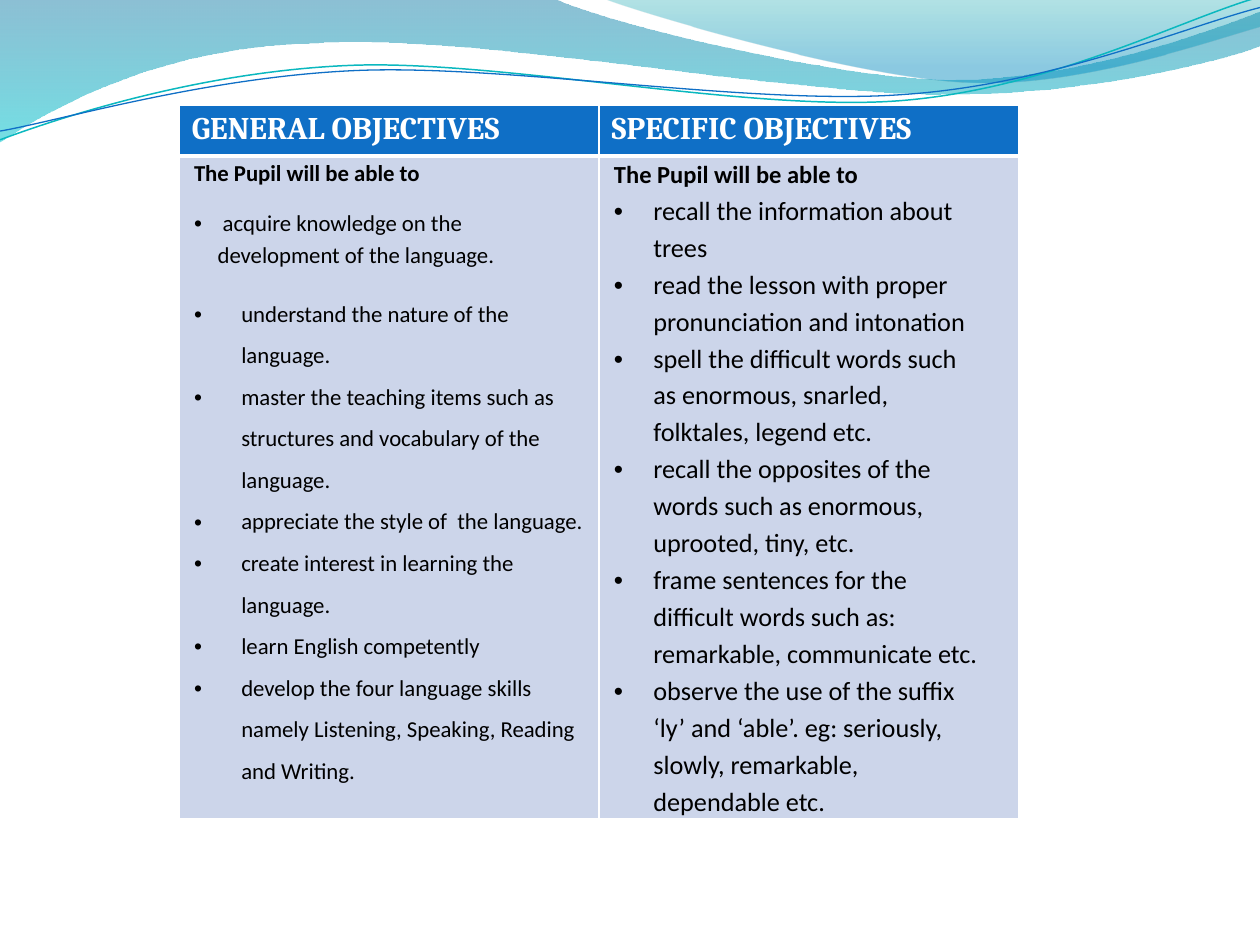
import math
from dataclasses import dataclass

from lxml import etree
from pptx import Presentation
from pptx.dml.color import RGBColor
from pptx.enum.text import MSO_ANCHOR
from pptx.oxml.ns import qn
from pptx.util import Pt

TOP = MSO_ANCHOR.TOP


@dataclass(frozen=True)
class Theme:
    white: str = "FFFFFF"
    black: str = "000000"
    blue: str = "0F6FC6"
    teal: str = "0AB8BF"
    pale: str = "CCD5EA"
    # Gradient stops: position %, colour, opacity %
    wave: tuple = ((0, "0074A1", 45), (100, "00C6CF", 55))
    crest: tuple = ((0, "00A1A9", 30), (80, "008BBF", 45))
    heading_font: str = "Cambria"
    body_font: str = "Calibri"
    heading: int = 18
    general: int = 13
    lead: int = 14
    specific: int = 15


# Outlines in points: two numbers make a line, six make a Bézier curve
WAVE = [(0, 0), (316.8, -0.7), (342.7, 12.2, 478.1, 45.4, 545.8, 45.4),
        (614.2, 45.4, 689.8, 18.7, 720, 6.5), (720.7, 25.9),
        (707.8, 31.7, 626.4, 54.7, 537.1, 54), (447.8, 54, 275, 20.2, 185, 24.5),
        (92.9, 25.9, 33.1, 59.8, -0.7, 81.4)]
CREST = [(344.9, -0.7), (366.5, 7.9, 491, 44.6, 553.7, 46.8),
         (616.3, 49.7, 691.9, 23, 720, 15.1), (720, 0)]
TEAL_LINE = [(0, 79.9), (34.6, 67, 113.8, 41, 199.4, 37.4),
             (284.4, 33.8, 427, 64.1, 513.4, 57.6), (599.8, 51.1, 675.4, 10.8, 718.6, -1.4)]
BLUE_LINE = [(0, 74.9), (33.8, 69.1, 118.1, 43.9, 203.8, 40.3),
             (290.2, 36.7, 429.8, 60.5, 516.2, 54), (601.9, 48.2, 677.5, 15.1, 720, 4.3)]
LINE_TILT = -2.7

LEAD = "The Pupil will be able to"
GENERAL_FIRST = " acquire knowledge on the development of the language."
GENERAL = [
    "understand the nature of the language.",
    "master the teaching items such as structures and vocabulary of the language.",
    "appreciate the style of  the language.",
    "create interest in learning the language.",
    "learn English competently",
    "develop the four language skills namely Listening, Speaking, Reading and Writing.",
]
SPECIFIC = [
    "recall the information about trees",
    "read the lesson with proper pronunciation and intonation",
    "spell the difficult words such as enormous, snarled, folktales, legend etc.",
    "recall the opposites of the words such as enormous, uprooted, tiny, etc.",
    "frame sentences for the difficult words such as: remarkable, communicate etc.",
    "observe the use of the suffix ‘ly’ and ‘able’. eg: seriously, slowly, remarkable, "
    "dependable etc.",
]


def pairs(part):
    return list(zip(part[::2], part[1::2]))


def turn(outline, degrees, center):
    """Rotate every point of an outline clockwise about a center."""
    cos, sin = math.cos(math.radians(degrees)), math.sin(math.radians(degrees))
    turned = []
    for part in outline:
        offsets = [(x - center[0], y - center[1]) for x, y in pairs(part)]
        turned.append(tuple(value for x, y in offsets
                            for value in (center[0] + x * cos - y * sin,
                                          center[1] + x * sin + y * cos)))
    return turned


def add_element(parent, tag, **attributes):
    return etree.SubElement(parent, qn(tag), {k: str(v) for k, v in attributes.items()})


class SlideBuilder:
    def __init__(self, slide, theme):
        self.slide = slide
        self.theme = theme

    def freeform(self, outline, closed):
        ends = [(Pt(part[-2]), Pt(part[-1])) for part in outline]
        builder = self.slide.shapes.build_freeform(*ends[0], scale=1.0)
        builder.add_line_segments(ends[1:], close=closed)
        shape = builder.convert_to_shape()
        shape.shadow.inherit = False
        # Bend the straight segments that have control points
        segments = list(shape.element.iter(qn("a:lnTo")))
        for segment, part in zip(segments, outline[1:]):
            if len(part) == 6:
                bend = etree.Element(qn("a:cubicBezTo"))
                for x, y in pairs(part):
                    add_element(bend, "a:pt", x=Pt(x) - shape.left, y=Pt(y) - shape.top)
                segment.getparent().replace(segment, bend)
        return shape

    def gradient_area(self, outline, stops):
        shape = self.freeform(outline, closed=True)
        shape.line.fill.background()
        gradient = etree.Element(qn("a:gradFill"), rotWithShape="1")
        stop_list = add_element(gradient, "a:gsLst")
        for position, color, opacity in stops:
            stop = add_element(stop_list, "a:gs", pos=position * 1000)
            tone = add_element(stop, "a:srgbClr", val=color)
            add_element(tone, "a:alpha", val=opacity * 1000)
        add_element(gradient, "a:lin", ang=90 * 60000, scaled=0)
        shape.element.spPr.find(qn("a:custGeom")).addnext(gradient)

    def tilted_curve(self, outline, center, color, width):
        shape = self.freeform(turn(outline, -LINE_TILT, center), closed=False)
        shape.rotation = LINE_TILT
        shape.fill.background()
        shape.line.color.rgb = RGBColor.from_string(color)
        shape.line.width = Pt(width)

    def table(self, left, top, column_width, row_heights):
        frame = self.slide.shapes.add_table(len(row_heights), 2, Pt(left), Pt(top),
                                            Pt(2 * column_width), Pt(sum(row_heights)))
        table = frame.table
        table.horz_banding = False
        for row, height in zip(table.rows, row_heights):
            row.height = Pt(height)
        return table

    def style_cell(self, cell, fill, top_edge, bottom_edge):
        cell.vertical_anchor = TOP
        properties = cell._tc.get_or_add_tcPr()
        edges = (("a:lnL", 1), ("a:lnR", 1), ("a:lnT", top_edge), ("a:lnB", bottom_edge))
        for tag, width in edges:
            edge = add_element(properties, tag, w=Pt(width))
            add_element(add_element(edge, "a:solidFill"), "a:srgbClr", val=self.theme.white)
        cell.fill.solid()
        cell.fill.fore_color.rgb = RGBColor.from_string(fill)

    def paragraph(self, cell, text, size, color, font, bold=False, spacing=1.0, after=0,
                  indent=0):
        frame = cell.text_frame
        para = frame.add_paragraph() if frame.text else frame.paragraphs[0]
        para.line_spacing = spacing
        para.space_after = Pt(after)
        if indent:
            properties = para._p.get_or_add_pPr()
            properties.set("marL", str(Pt(indent)))
            properties.set("indent", str(-Pt(indent)))
            add_element(properties, "a:buFont", typeface="Arial")
            add_element(properties, "a:buChar", char="•")
        span = para.add_run()
        span.text = text
        span.font.size = Pt(size)
        span.font.name = font
        span.font.bold = bold
        span.font.color.rgb = RGBColor.from_string(color)

    def heading(self, cell, text):
        self.style_cell(cell, self.theme.blue, 1, 3)
        self.paragraph(cell, text, self.theme.heading, self.theme.white,
                       self.theme.heading_font, bold=True)

    def objectives(self, cell, items, right=8.5):
        """Fill a body cell; each item is text, size and paragraph options."""
        cell.margin_left, cell.margin_right = Pt(8.5), Pt(right)
        cell.margin_top = cell.margin_bottom = 0
        self.style_cell(cell, self.theme.pale, 3, 1)
        for text, size, options in items:
            self.paragraph(cell, text, size, self.theme.black, self.theme.body_font, **options)


def main():
    theme = Theme()
    deck = Presentation()
    deck.slide_width, deck.slide_height = Pt(720), Pt(540)
    page = SlideBuilder(deck.slides.add_slide(deck.slide_layouts[6]), theme)

    # Wave decoration
    page.gradient_area(WAVE, theme.wave)
    page.gradient_area(CREST, theme.crest)
    page.tilted_curve(TEAL_LINE, (359.3, 41.4), theme.teal, 0.85)
    page.tilted_curve(BLUE_LINE, (359.6, 42.5), theme.blue, 0.75)

    # Objectives table
    table = page.table(102.4, 60, 240, (29.2, 378))
    page.heading(table.cell(0, 0), "GENERAL OBJECTIVES")
    page.heading(table.cell(0, 1), "SPECIFIC OBJECTIVES")

    general = [(LEAD, theme.general, dict(bold=True, spacing=1.15, after=10)),
               (GENERAL_FIRST, theme.general, dict(spacing=1.15, after=10, indent=13.5))]
    general += [(text, theme.general, dict(spacing=1.5, indent=27)) for text in GENERAL]
    page.objectives(table.cell(1, 0), general)

    specific = [(LEAD, theme.lead, dict(bold=True, spacing=1.15))]
    specific += [(text, theme.specific, dict(spacing=1.15, indent=22.5)) for text in SPECIFIC]
    page.objectives(table.cell(1, 1), specific, right=21.5)

    deck.save("out.pptx")


if __name__ == "__main__":
    main()
